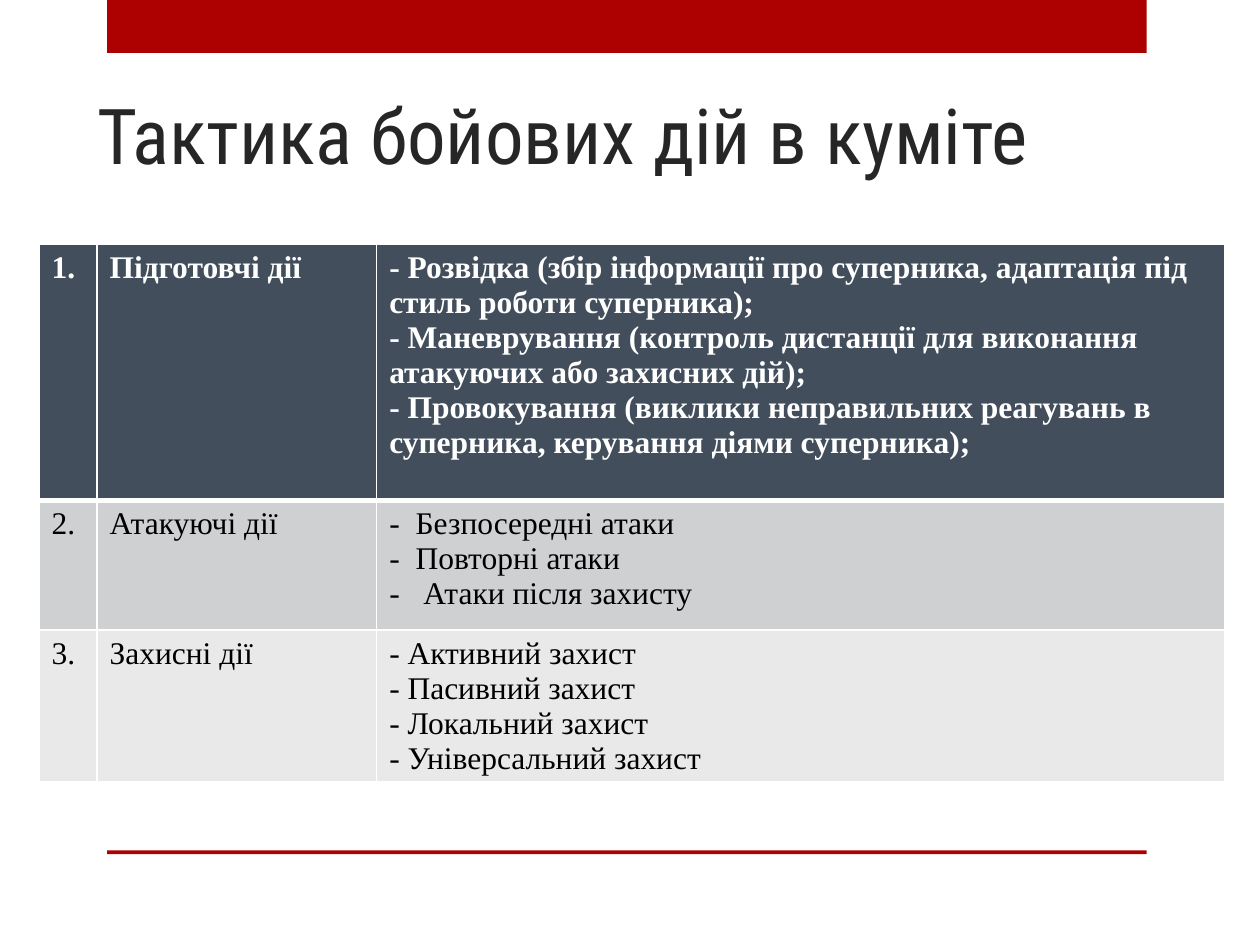
from lxml import etree
from pptx import Presentation
from pptx.dml.color import RGBColor
from pptx.enum.shapes import MSO_SHAPE
from pptx.enum.text import MSO_ANCHOR, MSO_AUTO_SIZE, PP_ALIGN
from pptx.oxml.ns import qn
from pptx.util import Inches, Pt

RECT = MSO_SHAPE.RECTANGLE
BOTTOM = MSO_ANCHOR.BOTTOM
NO_FIT = MSO_AUTO_SIZE.NONE
LEFT = PP_ALIGN.LEFT

RED, WHITE, BLACK = "AD0101", "FFFFFF", "000000"
COLS = [0.46, 2.22, 6.73]
# Row height, fill, text colour, bold, bottom border, indent of list lines
ROWS = [
    (2.03, "424E5B", WHITE, True, 3, []),
    (1.03, "CFD0D2", BLACK, False, 1, [0.21, 0.21, 0.27]),
    (1.2, "E9E9EA", BLACK, False, 1, []),
]
TEXTS = [
    ("1.", "Підготовчі дії",
     "- Розвідка (збір інформації про суперника, адаптація під стиль роботи суперника);\n"
     "- Маневрування (контроль дистанції для виконання атакуючих або захисних дій);\n"
     "- Провокування (виклики неправильних реагувань в суперника, керування діями суперника);"),
    ("2.", "Атакуючі дії",
     "-\tБезпосередні атаки\n-\tПовторні атаки\n-\tАтаки після захисту"),
    ("3.", "Захисні дії",
     "- Активний захист\n- Пасивний захист\n- Локальний захист\n- Універсальний захист"),
]


def paint(fill, color):
    fill.solid()
    fill.fore_color.rgb = RGBColor.from_string(color)


def set_font(para, name, size, color, bold=False):
    font = para.font
    font.name, font.size, font.bold = name, Pt(size), bold
    font.color.rgb = RGBColor.from_string(color)


def add_bar(slide, top, height):
    bar = slide.shapes.add_shape(
        RECT, Inches(0.85), Inches(top), Inches(8.25), Inches(height))
    bar.shadow.inherit = False
    paint(bar.fill, RED)
    bar.line.fill.background()


def add_title(slide, text):
    title = slide.shapes.title
    title.left, title.top = Inches(0.67), Inches(-0.27)
    title.width, title.height = Inches(8.58), Inches(1.75)
    frame = title.text_frame
    frame.text = text
    frame.word_wrap = True
    frame.auto_size = NO_FIT
    frame.vertical_anchor = BOTTOM
    frame.paragraphs[0].alignment = LEFT
    set_font(frame.paragraphs[0], "Roboto Condensed", 44, "262626")


def set_edges(cell, base):
    props = cell._tc.get_or_add_tcPr()
    for spot, side in enumerate("LRTB"):
        width = base if side == "B" else 1
        edge = etree.Element(qn(f"a:ln{side}"), w=str(Pt(width)))
        fill = etree.SubElement(edge, qn("a:solidFill"))
        etree.SubElement(fill, qn("a:srgbClr"), val=WHITE)
        props.insert(spot, edge)


def hang(para, indent):
    props = para._p.get_or_add_pPr()
    props.set("marL", str(Inches(indent)))
    props.set("indent", str(-Inches(indent)))


def add_grid(slide):
    high = sum(row[0] for row in ROWS)
    frame = slide.shapes.add_table(
        len(ROWS), len(COLS), Inches(0.31), Inches(1.94),
        Inches(sum(COLS)), Inches(high))
    table = frame.table
    for col, width in zip(table.columns, COLS):
        col.width = Inches(width)
    for row, look, texts in zip(table.rows, ROWS, TEXTS):
        height, fill, color, bold, base, indents = look
        row.height = Inches(height)
        for cell, text in zip(row.cells, texts):
            cell.text = text
            paint(cell.fill, fill)
            set_edges(cell, base)
            for para in cell.text_frame.paragraphs:
                set_font(para, "Times New Roman", 18, color, bold)
        # Hanging indents in the list column
        for para, indent in zip(row.cells[2].text_frame.paragraphs, indents):
            hang(para, indent)


def main():
    deck = Presentation()
    deck.slide_width, deck.slide_height = Inches(10), Inches(7.5)
    slide = deck.slides.add_slide(deck.slide_layouts[5])
    # Red bars at top and bottom
    add_bar(slide, 0, 0.42)
    add_bar(slide, 6.75, 0.03)
    add_title(slide, "Тактика бойових дій в куміте")
    add_grid(slide)
    deck.save("out.pptx")


if __name__ == "__main__":
    main()
